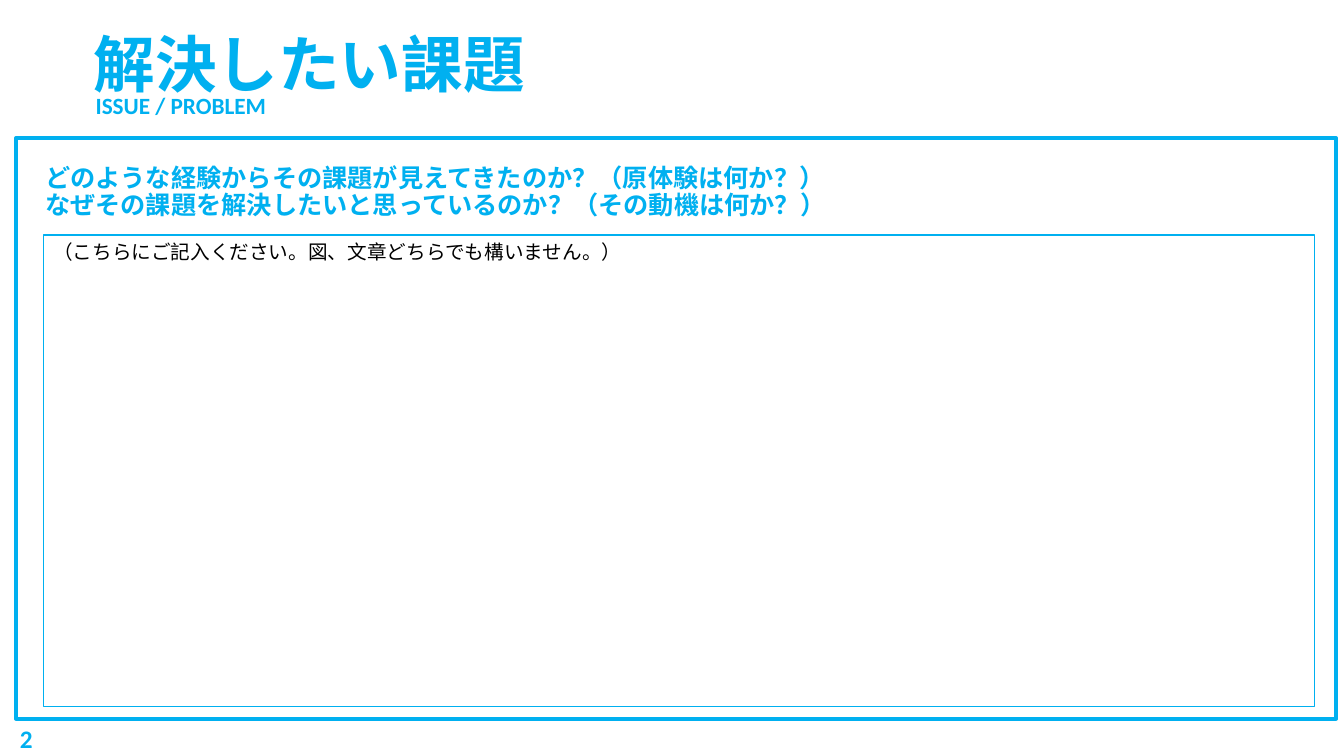
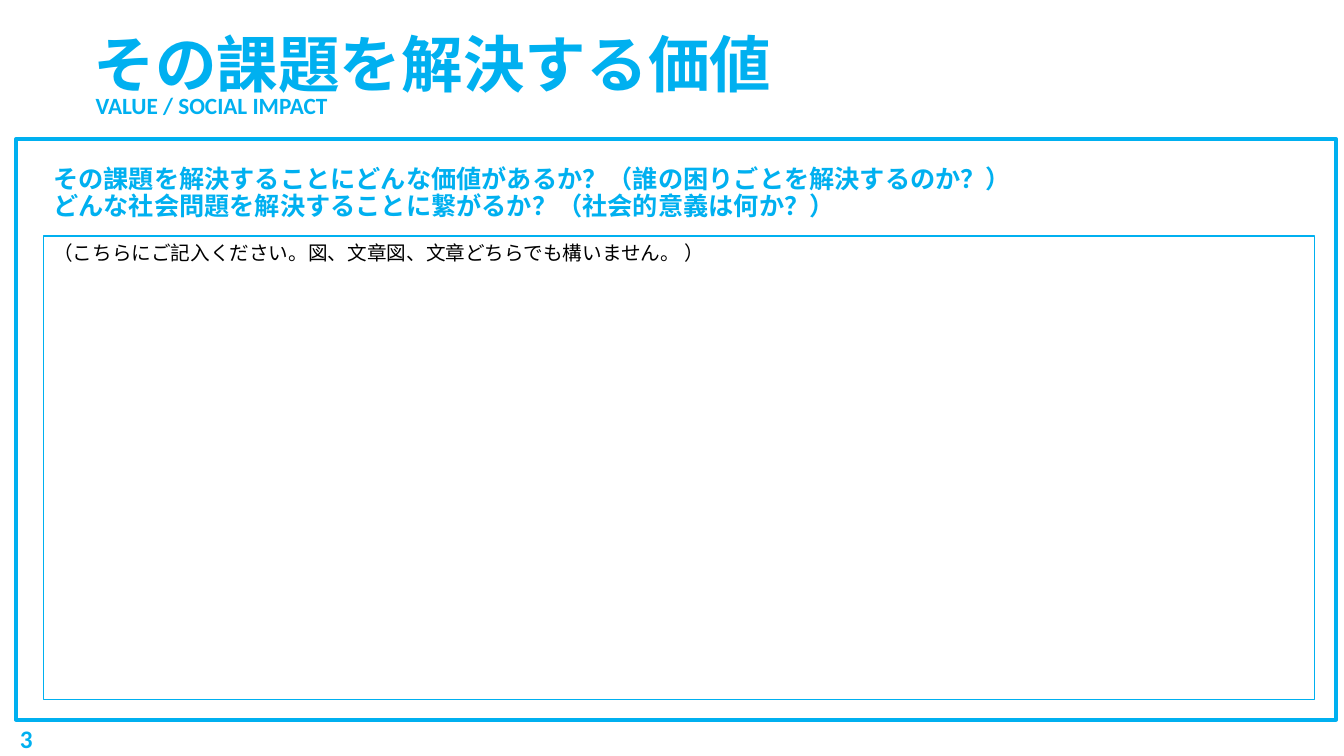
from pptx import Presentation
from pptx.dml.color import RGBColor
from pptx.enum.shapes import MSO_SHAPE
from pptx.enum.text import MSO_ANCHOR, PP_ALIGN
from pptx.util import Inches, Pt

# Shared look
FONT = "Calibri"
BLUE, WHITE, BLACK = "00B0F0", "FFFFFF", "000000"

# What differs from slide to slide
PAGES = [
    dict(
        number=2, title="解決したい課題",
        label="ISSUE / PROBLEM", width=2.02,
        asks=["どのような経験からその課題が見えてきたのか？（原体験は何か？）",
              "なぜその課題を解決したいと思っているのか？（その動機は何か？）"],
        hint="（こちらにご記入ください。図、文章どちらでも構いません。）",
        top=1.37, left=0.35, height=4.68,
    ),
    dict(
        number=3, title="その課題を解決する価値",
        label="VALUE / SOCIAL IMPACT", width=3.01,
        asks=["その課題を解決することにどんな価値があるか？（誰の困りごとを解決するのか？）",
              "どんな社会問題を解決することに繋がるか？（社会的意義は何か？）"],
        hint="（こちらにご記入ください。図、文章図、文章どちらでも構いません。 ）",
        top=1.38, left=0.43, height=4.6,
    ),
]


def color(code):
    return RGBColor.from_string(code)


def write(shape, text, size, ink=BLUE, bold=True, space=1.0,
          anchor=MSO_ANCHOR.MIDDLE):
    frame = shape.text_frame
    frame.word_wrap = True
    frame.vertical_anchor = anchor
    frame.text = text
    for para in frame.paragraphs:
        para.alignment = PP_ALIGN.LEFT
        para.line_spacing = space
        for run in para.runs:
            font = run.font
            font.name, font.size, font.bold = FONT, Pt(size), bold
            font.color.rgb = color(ink)


def add_text(slide, area, text, size, space=1.0):
    box = slide.shapes.add_textbox(*map(Inches, area))
    write(box, text, size, space=space)


def add_frame(slide, area, weight):
    box = slide.shapes.add_shape(MSO_SHAPE.RECTANGLE, *map(Inches, area))
    box.shadow.inherit = False
    box.fill.solid()
    box.fill.fore_color.rgb = color(WHITE)
    box.line.color.rgb = color(BLUE)
    box.line.width = Pt(weight)
    return box


def add_page(deck, page):
    slide = deck.slides.add_slide(deck.slide_layouts[6])
    top = page["top"]

    # Heading
    add_text(slide, (0.83, -0.06, 11.5, 1.45), page["title"], 44, 0.9)
    add_text(slide, (0.85, 0.89, page["width"], 0.35), page["label"], 16.6, 0.8)

    # Outer frame and questions
    add_frame(slide, (0.16, top, 13.09, 5.76), 3)
    add_text(slide, (page["left"], top + 0.12, 10.24, 0.84),
             "\n".join(page["asks"]), 18, 0.9)

    # Answer area
    field = add_frame(slide, (0.43, top + 0.96, 12.61, page["height"]), 1)
    write(field, page["hint"], 14, BLACK, False, anchor=MSO_ANCHOR.TOP)

    # Page number
    add_text(slide, (0.1, 7.13, 3, 0.4), str(page["number"]), 18)


def main():
    deck = Presentation()
    deck.slide_width, deck.slide_height = Inches(13.33), Inches(7.5)
    for page in PAGES:
        add_page(deck, page)
    deck.save("out.pptx")


if __name__ == "__main__":
    main()
